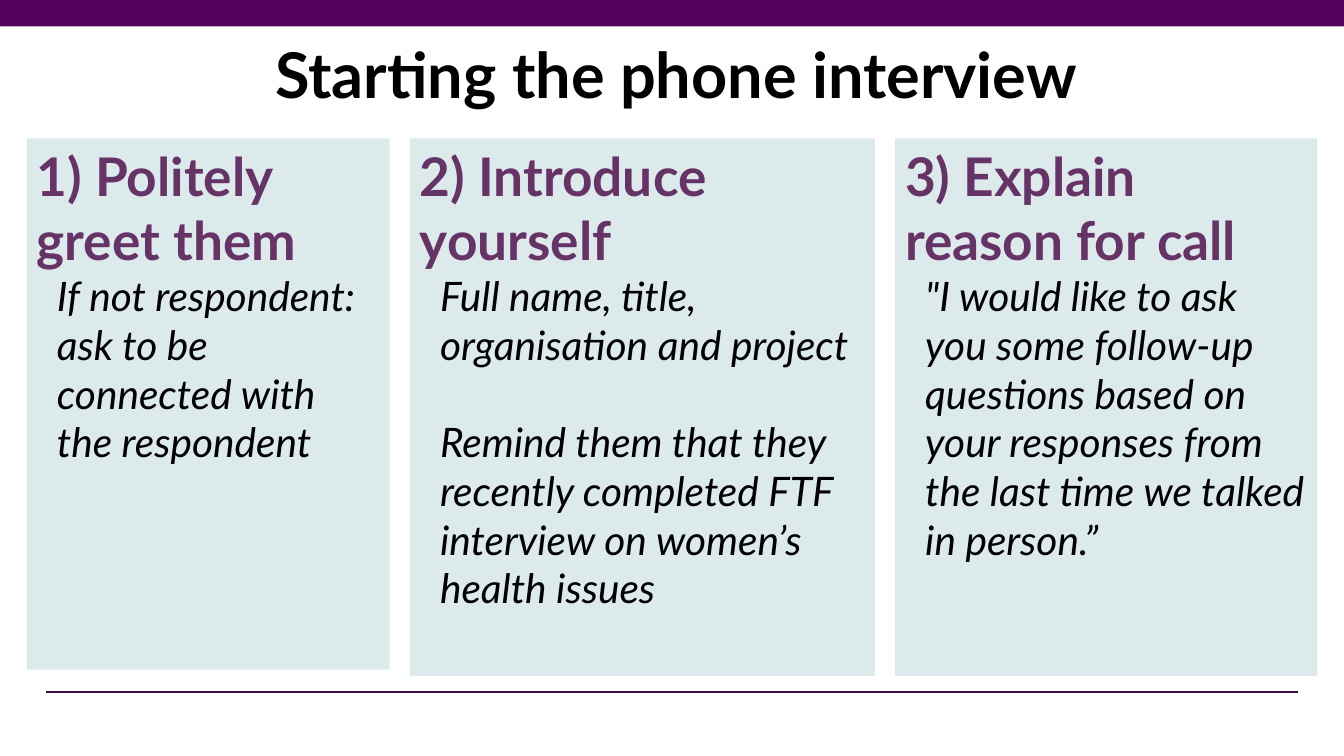
from dataclasses import dataclass

from lxml.etree import SubElement
from pptx import Presentation
from pptx.dml.color import RGBColor
from pptx.enum.shapes import MSO_CONNECTOR, MSO_SHAPE
from pptx.enum.text import MSO_ANCHOR, MSO_AUTO_SIZE, PP_ALIGN
from pptx.oxml.ns import qn
from pptx.shapes.autoshape import Shape
from pptx.slide import Slide
from pptx.text.text import Font
from pptx.util import Inches, Length, Pt


@dataclass(frozen=True)
class Theme:
    font: str = "Lato"
    bar: RGBColor = RGBColor(0x55, 0x01, 0x5B)
    rule: RGBColor = RGBColor(0x41, 0x10, 0x44)
    panel: RGBColor = RGBColor(0xDD, 0xEA, 0xEC)
    heading: RGBColor = RGBColor(0x66, 0x33, 0x66)
    text: RGBColor = RGBColor(0, 0, 0)
    title_size: Length = Pt(45)
    heading_size: Length = Pt(38)
    body_size: Length = Pt(29)
    body_indent: Length = Inches(0.2)
    body_gap: Length = Pt(34.8)


@dataclass(frozen=True)
class Step:
    heading: str
    details: tuple[str, ...]
    columns: int
    rows: int


THEME = Theme()
WIDTH, HEIGHT = Inches(13.33), Inches(7.5)
GRID = 1000  # columns across and rows down the slide
MARGIN, GAP, STEPS_TOP = 20, 15, 183

STEPS = (
    Step("1) Politely greet them",
         ("If not respondent: ask to be connected with the respondent",), 270, 703),
    Step("2) Introduce yourself",
         ("Full name, title, organisation and project",
          "Remind them that they recently completed FTF interview on women’s health issues"),
         346, 711),
    Step("3) Explain reason for call",
         ('"I would like to ask you some follow-up questions based on your responses '
          'from the last time we talked in person.”',), 314, 711),
)


def across(columns: int) -> Length:
    return Length(WIDTH * columns // GRID)


def down(rows: int) -> Length:
    return Length(HEIGHT * rows // GRID)


def set_font(font: Font, size: Length, color: RGBColor,
             bold: bool = False, italic: bool = False) -> None:
    font.name, font.size, font.bold, font.italic = THEME.font, size, bold, italic
    font.color.rgb = color


def add_block(slide: Slide, left: int, top: int, columns: int, rows: int,
              fill: RGBColor) -> Shape:
    block = slide.shapes.add_shape(MSO_SHAPE.RECTANGLE, across(left), down(top),
                                   across(columns), down(rows))
    block.shadow.inherit = False
    block.fill.solid()
    block.fill.fore_color.rgb = fill
    block.line.fill.background()
    return block


def add_title(slide: Slide, wording: str) -> None:
    title = slide.shapes.title
    title.left, title.top = across(49), down(40)
    title.width, title.height = across(908), down(220)
    frame = title.text_frame
    frame.text = wording
    frame.auto_size = MSO_AUTO_SIZE.NONE
    frame.vertical_anchor = MSO_ANCHOR.TOP
    frame.paragraphs[0].alignment = PP_ALIGN.CENTER
    set_font(frame.paragraphs[0].font, THEME.title_size, THEME.text, bold=True)


def add_footer_rule(slide: Slide) -> None:
    rule = slide.shapes.add_connector(MSO_CONNECTOR.STRAIGHT, across(966), down(915),
                                      across(34), down(915))
    rule.line.color.rgb = THEME.rule
    rule.line.width = Pt(1.25)
    SubElement(rule._element.spPr, qn("a:effectLst"))


def add_step(slide: Slide, step: Step, left: int) -> None:
    panel = add_block(slide, left, STEPS_TOP, step.columns, step.rows, THEME.panel)
    frame = panel.text_frame
    frame.word_wrap = True
    frame.vertical_anchor = MSO_ANCHOR.TOP
    heading = frame.paragraphs[0]
    heading.text = step.heading
    heading.alignment = PP_ALIGN.LEFT
    set_font(heading.font, THEME.heading_size, THEME.heading, bold=True)
    for position, wording in enumerate(step.details):
        detail = frame.add_paragraph()
        detail.text = wording
        detail.alignment = PP_ALIGN.LEFT
        detail._p.get_or_add_pPr().set("marL", str(THEME.body_indent))
        if position:
            detail.space_before = THEME.body_gap
        set_font(detail.font, THEME.body_size, THEME.text, italic=True)


def main() -> None:
    presentation = Presentation()
    presentation.slide_width, presentation.slide_height = WIDTH, HEIGHT
    slide = presentation.slides.add_slide(presentation.slide_layouts.get_by_name("Title Only"))
    add_footer_rule(slide)
    add_title(slide, "Starting the phone interview")
    add_block(slide, 0, 0, GRID, 35, THEME.bar)
    left = MARGIN
    for step in STEPS:
        add_step(slide, step, left)
        left += step.columns + GAP
    presentation.save("out.pptx")


if __name__ == "__main__":
    main()
